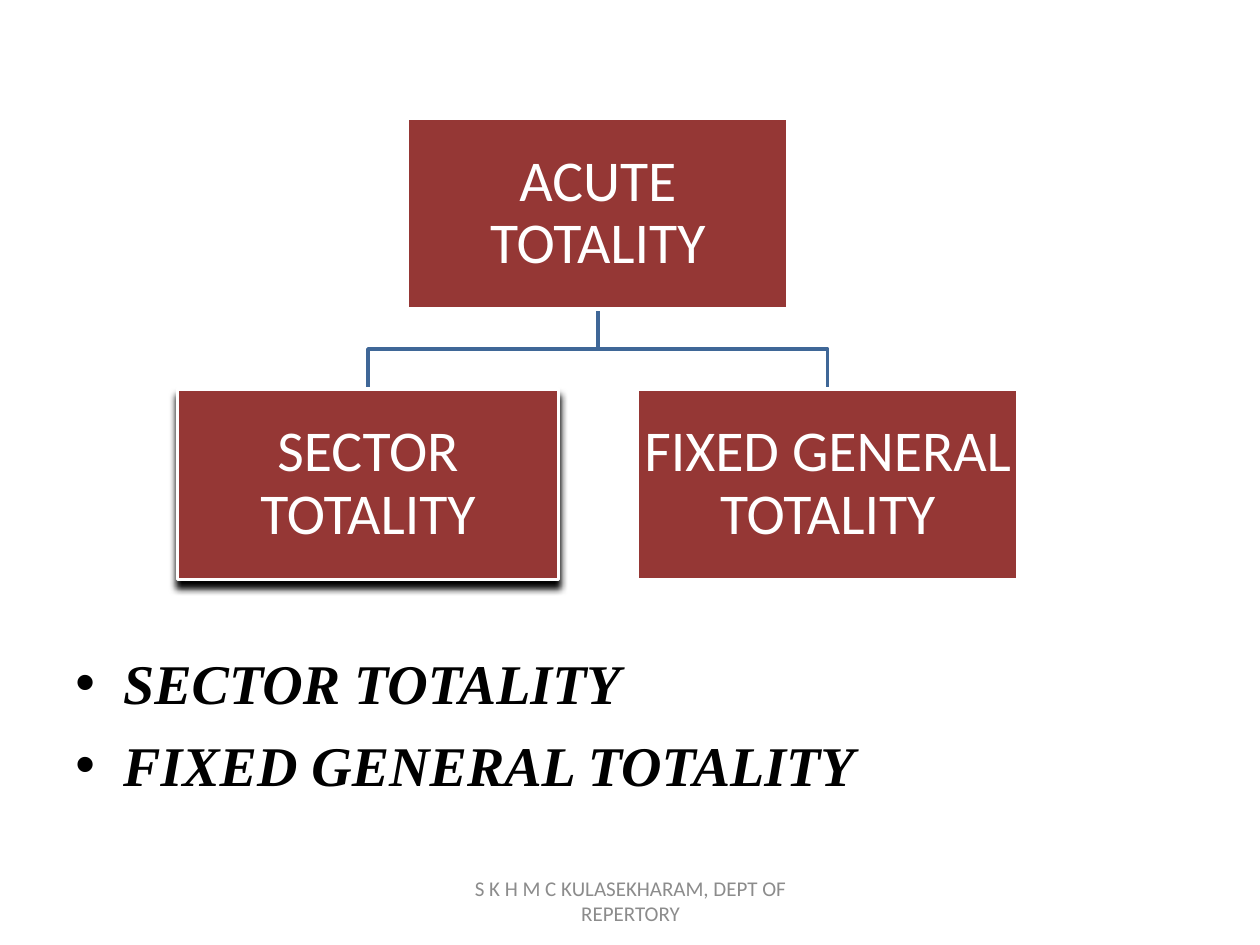
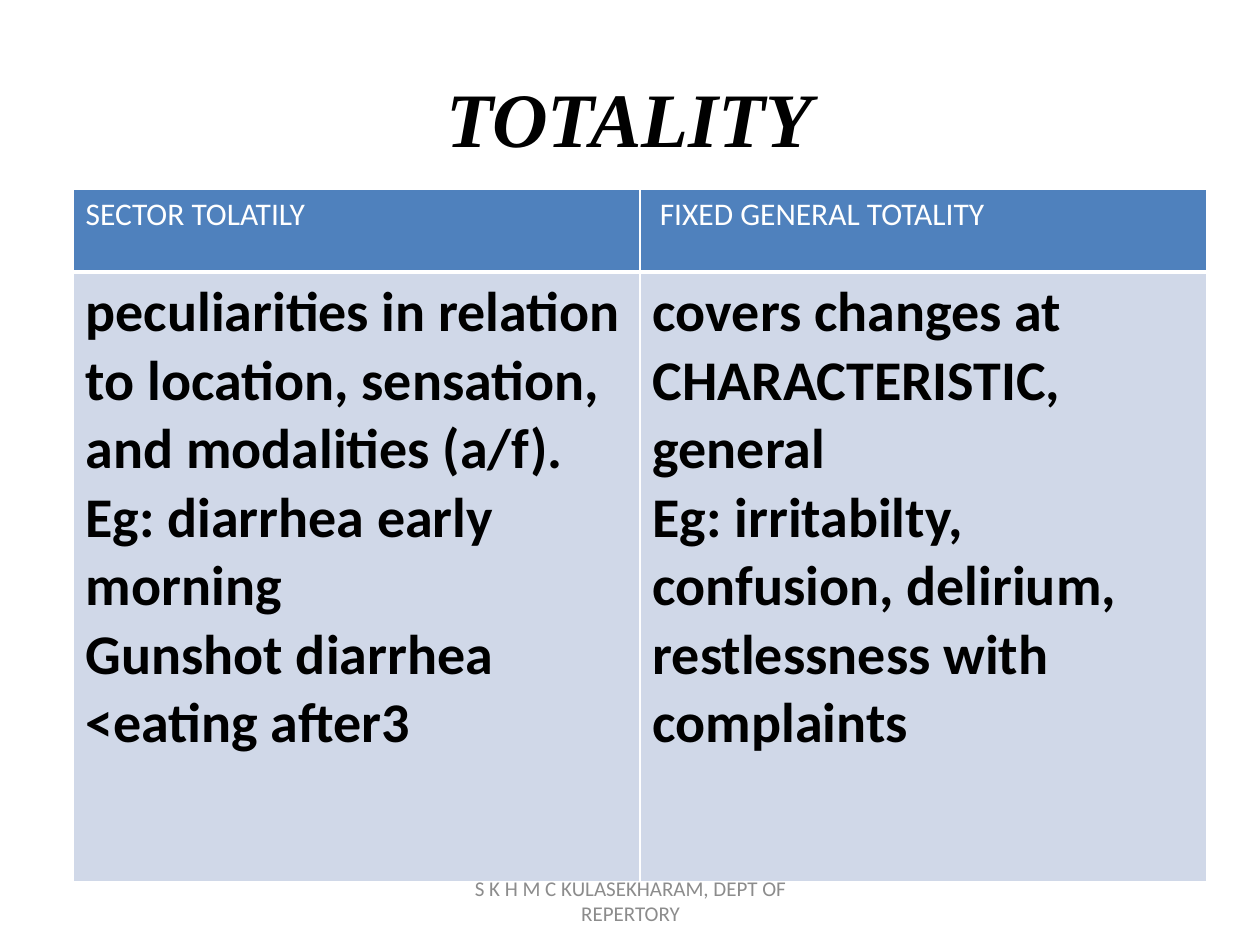
import pptx
import pptx.util
import pptx.dml.color
import pptx.enum.shapes
import pptx.enum.text
import pptx.oxml
import pptx.oxml.ns
from lxml import etree

SLIDE_W, SLIDE_H = 10, 7.5
BLACK, WHITE, GREY = "000000", "FFFFFF", "8C8C8C"
MAROON, LINK_BLUE, HEAD_BLUE, PALE_BLUE = "953735", "3F6797", "4F81BD", "D0D8E8"

SERIF = dict(name="Times New Roman", bold=True, italic=True, color=BLACK)
TITLE = dict(SERIF, size=44)
BULLET = dict(SERIF, size=32)
FOOTER = dict(name="Calibri", size=12, color=GREY)
NODE = dict(name="Calibri", size=33, color=WHITE)
HEAD_CELL = dict(name="Calibri", size=18, bold=False, color=WHITE)
BODY_CELL = dict(name="Calibri", size=32, bold=True, color=BLACK)

FOOTER_TEXT = "S K H M C KULASEKHARAM, DEPT OF REPERTORY"
LEFT, CENTER = pptx.enum.text.PP_ALIGN.LEFT, pptx.enum.text.PP_ALIGN.CENTER
TOP, MIDDLE = pptx.enum.text.MSO_ANCHOR.TOP, pptx.enum.text.MSO_ANCHOR.MIDDLE
MARGINS = ("margin_left", "margin_top", "margin_right", "margin_bottom")


def rgb(value):
    return pptx.dml.color.RGBColor.from_string(value)


def emu(*lengths):
    return [pptx.util.Inches(v) for v in lengths]


def share(x, y, w, h):
    return x * SLIDE_W, y * SLIDE_H, w * SLIDE_W, h * SLIDE_H


def add_xml(parent, tag, **attrs):
    el = etree.SubElement(parent, pptx.oxml.ns.qn(tag))
    for key, value in attrs.items():
        el.set(key, str(value))
    return el


def style(font, fmt):
    for key, value in fmt.items():
        if key == "color":
            font.color.rgb = rgb(value)
        else:
            setattr(font, key, pptx.util.Pt(value) if key == "size" else value)


def write(tf, lines, fmt, align=LEFT, anchor=TOP, bullet=False, **para):
    tf.word_wrap = True
    tf.vertical_anchor = anchor
    for i, line in enumerate(lines):
        p = tf.paragraphs[0] if i == 0 else tf.add_paragraph()
        p.alignment = align
        for key, value in para.items():
            setattr(p, key, value)
        if bullet:
            if i:
                p.space_before = pptx.util.Pt(8)
            pPr = p._p.get_or_add_pPr()
            indent = pptx.util.Inches(0.38)
            pPr.set("marL", str(indent))
            pPr.set("indent", str(-indent))
            add_xml(pPr, "a:buFont", typeface="Arial")
            add_xml(pPr, "a:buChar", char="•")
        r = p.add_run()
        r.text = line
        style(r.font, fmt)


def add_text(s, box, lines, fmt, **layout):
    write(s.shapes.add_textbox(*emu(*box)).text_frame, lines, fmt, **layout)


def add_footer(s):
    add_text(s, share(0.342, 0.927, 0.317, 0.053), [FOOTER_TEXT], FOOTER,
             align=CENTER, anchor=MIDDLE)


def add_node(s, box, label, raised):
    sp = s.shapes.add_shape(pptx.enum.shapes.MSO_SHAPE.RECTANGLE, *emu(*box))
    sp.shadow.inherit = False
    sp.fill.solid()
    sp.fill.fore_color.rgb = rgb(MAROON)
    sp.line.color.rgb = rgb(WHITE)
    sp.line.width = pptx.util.Pt(2)
    if raised:
        effects = sp._element.spPr.find(pptx.oxml.ns.qn("a:effectLst"))
        offset = pptx.util.Pt(4)
        shadow = add_xml(effects, "a:outerShdw", blurRad=offset, dist=offset,
                         dir=90 * 60000, rotWithShape=0)
        add_xml(add_xml(shadow, "a:srgbClr", val=BLACK), "a:alpha", val=99000)
    for margin in MARGINS:
        setattr(sp.text_frame, margin, pptx.util.Inches(0.02))
    write(sp.text_frame, [label], NODE, align=CENTER, anchor=MIDDLE, line_spacing=0.9)


def add_branch(s, points):
    start, *rest = [emu(*point) for point in points]
    builder = s.shapes.build_freeform(*start, scale=1.0)
    builder.add_line_segments(rest, close=False)
    sp = builder.convert_to_shape()
    sp.shadow.inherit = False
    sp.fill.background()
    sp.line.color.rgb = rgb(LINK_BLUE)
    sp.line.width = pptx.util.Pt(2)


def add_hierarchy(s, box, root, children, raised):
    x, y, w, h = box
    node_w, node_h = w * 0.453, h * 0.413
    mid_x, root_bottom, child_top = x + w / 2, y + node_h, y + h - node_h
    mid_y = (root_bottom + child_top) / 2
    step = (w - node_w) / (len(children) - 1)
    lefts = [x + i * step for i in range(len(children))]
    for left in lefts:
        child_x = left + node_w / 2
        add_branch(s, [(mid_x, root_bottom), (mid_x, mid_y),
                       (child_x, mid_y), (child_x, child_top)])
    add_node(s, (mid_x - node_w / 2, y, node_w, node_h), root, False)
    for left, label in zip(lefts, children):
        add_node(s, (left, child_top, node_w, node_h), label, label == raised)


def set_borders(cell, widths):
    tcPr = cell._tc.get_or_add_tcPr()
    for i, (side, width) in enumerate(zip("LRTB", widths)):
        ln = pptx.oxml.parse_xml(
            f'<a:ln{side} {pptx.oxml.ns.nsdecls("a")} w="{pptx.util.Pt(width)}">'
            f'<a:solidFill><a:srgbClr val="{WHITE}"/></a:solidFill></a:ln{side}>')
        tcPr.insert(i, ln)


def add_comparison(s, box, columns, head_share):
    w, h = box[2:]
    table = s.shapes.add_table(2, len(columns), *emu(*box)).table
    looks = [(HEAD_BLUE, HEAD_CELL, (1, 1, 1, 3), head_share),
             (PALE_BLUE, BODY_CELL, (1, 1, 3, 1), 1 - head_share)]
    for row, look in zip(table.rows, looks):
        row.height = pptx.util.Inches(h * look[3])
    for c, (heading, body) in enumerate(columns):
        table.columns[c].width = pptx.util.Inches(w / len(columns))
        for r, lines in enumerate(([heading], body)):
            fill, fmt, borders, _ = looks[r]
            cell = table.cell(r, c)
            cell.fill.solid()
            cell.fill.fore_color.rgb = rgb(fill)
            write(cell.text_frame, lines, fmt)
            set_borders(cell, borders)


def acute_totality_slide(s):
    sector, general = "SECTOR TOTALITY", "FIXED GENERAL TOTALITY"
    add_text(s, share(0.05, 0.68, 0.9, 0.18), [sector, general], BULLET, bullet=True)
    add_footer(s)
    add_hierarchy(s, (1.41, 0.94, 6.67, 3.66), "ACUTE TOTALITY",
                  [sector, general], raised=sector)


def totality_slide(s):
    add_text(s, share(0.05, 0.04, 0.9, 0.167), ["TOTALITY"], TITLE,
             align=CENTER, anchor=MIDDLE)
    add_comparison(s, (0.58, 1.5, 9, 5.5), [
        ("SECTOR TOLATILY", [
            "peculiarities in relation to location, sensation, and modalities (a/f).",
            "Eg: diarrhea early morning",
            "Gunshot diarrhea",
            "<eating after3"]),
        (" FIXED GENERAL TOTALITY", [
            "covers changes at CHARACTERISTIC, general",
            "Eg: irritabilty, confusion, delirium, restlessness with complaints"]),
    ], head_share=0.12)
    add_footer(s)


def main():
    prs = pptx.Presentation()
    prs.slide_width, prs.slide_height = emu(SLIDE_W, SLIDE_H)
    for build in (acute_totality_slide, totality_slide):
        build(prs.slides.add_slide(prs.slide_layouts[6]))
    prs.save("out.pptx")


if __name__ == "__main__":
    main()
